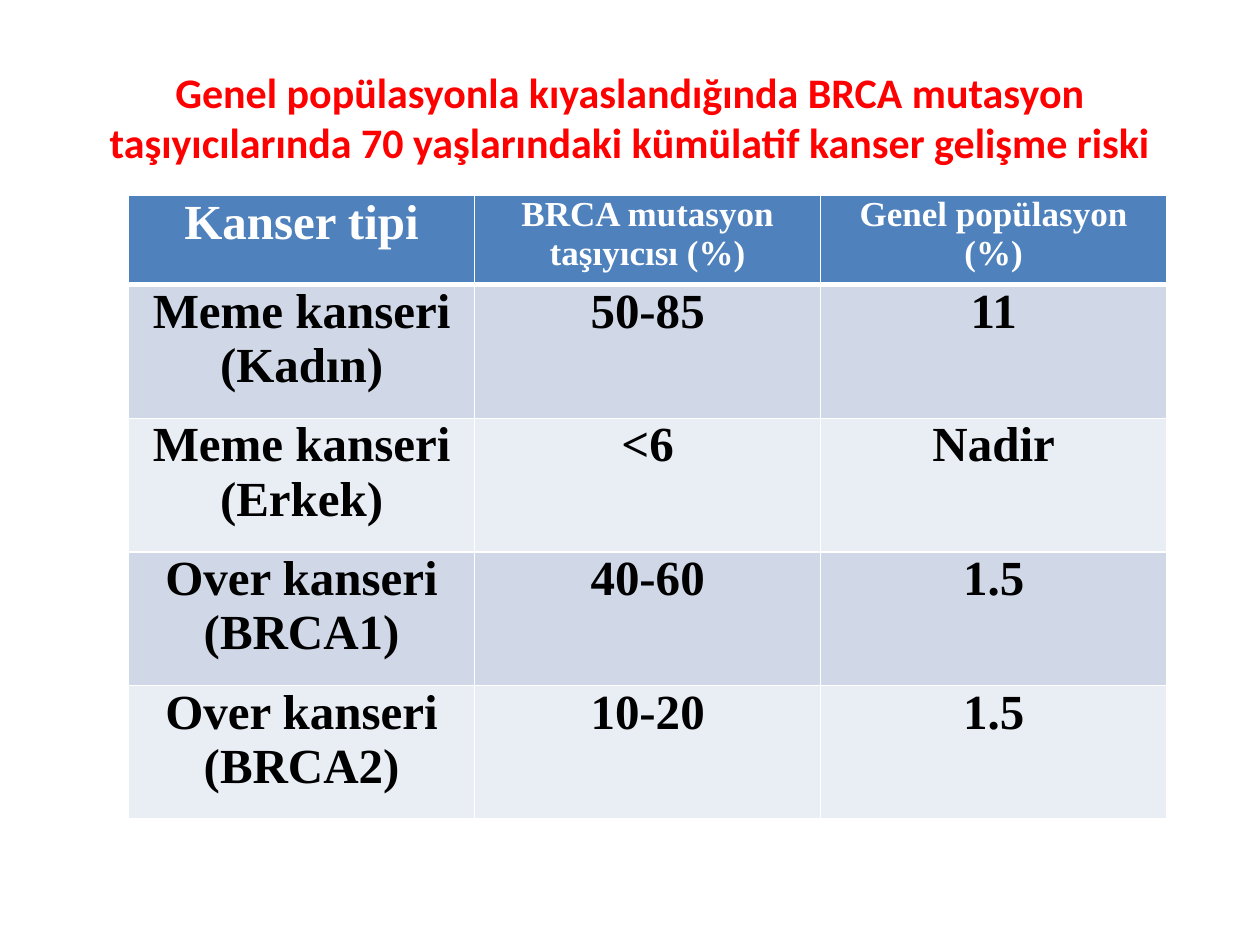
from lxml import etree
from pptx import Presentation
from pptx.dml.color import RGBColor
from pptx.enum.text import MSO_ANCHOR, PP_ALIGN
from pptx.oxml.ns import qn
from pptx.util import Inches, Pt

CENTER = PP_ALIGN.CENTER
MIDDLE = MSO_ANCHOR.MIDDLE
TITLE_ONLY = 5

TITLE = ("Genel popülasyonla kıyaslandığında BRCA mutasyon taşıyıcılarında "
         "70 yaşlarındaki kümülatif kanser gelişme riski")
RISKS = [
    ("Kanser tipi", "BRCA mutasyon taşıyıcısı (%)", "Genel popülasyon (%)"),
    ("Meme kanseri (Kadın)", "50-85", "11"),
    ("Meme kanseri (Erkek)", "<6", "Nadir"),
    ("Over kanseri (BRCA1)", "40-60", "1.5"),
    ("Over kanseri (BRCA2)", "10-20", "1.5"),
]
HEADER_FILL = "4F81BD"
BAND_FILLS = ("E9EDF4", "D0D8E8")
HEADER_HEIGHT = 0.71


def color(hex_string):
    return RGBColor.from_string(hex_string)


def write(frame, text, font, size, hex_string):
    para = frame.paragraphs[0]
    para.alignment = CENTER
    span = para.add_run()
    span.text = text
    span.font.name = font
    span.font.size = Pt(size)
    span.font.bold = True
    span.font.color.rgb = color(hex_string)


def add_border(cell, side, width):
    line = etree.SubElement(cell._tc.get_or_add_tcPr(), qn(f"a:ln{side}"), w=str(Pt(width)))
    fill = etree.SubElement(line, qn("a:solidFill"))
    etree.SubElement(fill, qn("a:srgbClr"), val="FFFFFF")


def place_title(page, left, top, width, height):
    title = page.shapes.title
    title.left, title.top = Inches(left), Inches(top)
    title.width, title.height = Inches(width), Inches(height)
    frame = title.text_frame
    frame.word_wrap = True
    frame.vertical_anchor = MIDDLE
    write(frame, TITLE, "Calibri", 24, "FF0000")


def format_cell(cell, text, row, column):
    header = row == 0
    cell.margin_left = cell.margin_right = Inches(0.07)
    cell.margin_top = cell.margin_bottom = 0
    widths = {"L": 1, "R": 1, "T": 3 if row == 1 else 1, "B": 3 if header else 1}
    for side, width in widths.items():
        add_border(cell, side, width)
    cell.fill.solid()
    cell.fill.fore_color.rgb = color(HEADER_FILL if header else BAND_FILLS[row % 2])
    size = 20 if header and column > 0 else 28
    write(cell.text_frame, text, "Times New Roman", size, "FFFFFF" if header else "000000")


def place_risk_table(page, left, top, width, height):
    row_count, column_count = len(RISKS), len(RISKS[0])
    table = page.shapes.add_table(row_count, column_count, Inches(left), Inches(top),
                                  Inches(width), Inches(height)).table
    body_height = (height - HEADER_HEIGHT) / (row_count - 1)
    for column in table.columns:
        column.width = Inches(width / column_count)
    for row, texts in enumerate(RISKS):
        table.rows[row].height = Inches(body_height if row else HEADER_HEIGHT)
        for column, text in enumerate(texts):
            format_cell(table.cell(row, column), text, row, column)


def main():
    deck = Presentation()
    deck.slide_width, deck.slide_height = Inches(10), Inches(7.5)
    page = deck.slides.add_slide(deck.slide_layouts[TITLE_ONLY])
    place_title(page, 0.5, 0.3, 9, 1.25)
    place_risk_table(page, 1.02, 1.55, 8.24, 4.95)
    deck.save("out.pptx")


if __name__ == "__main__":
    main()
